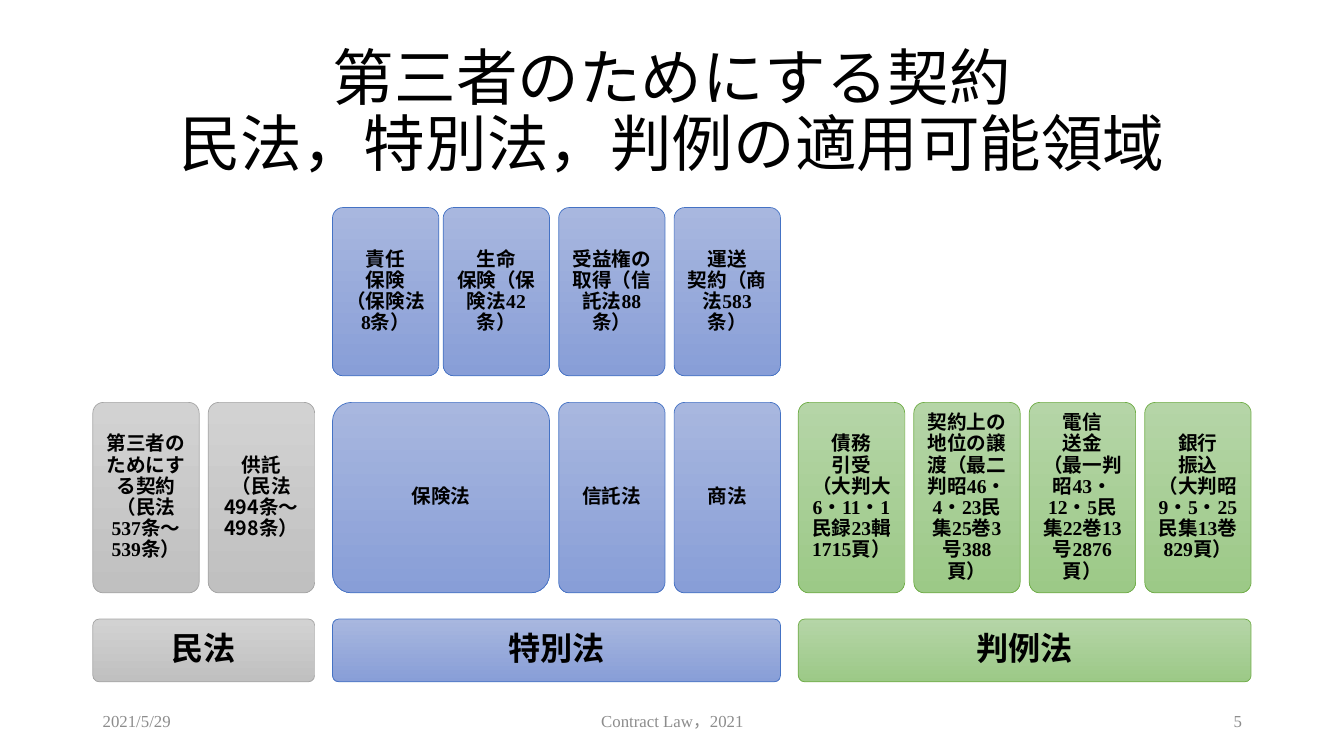
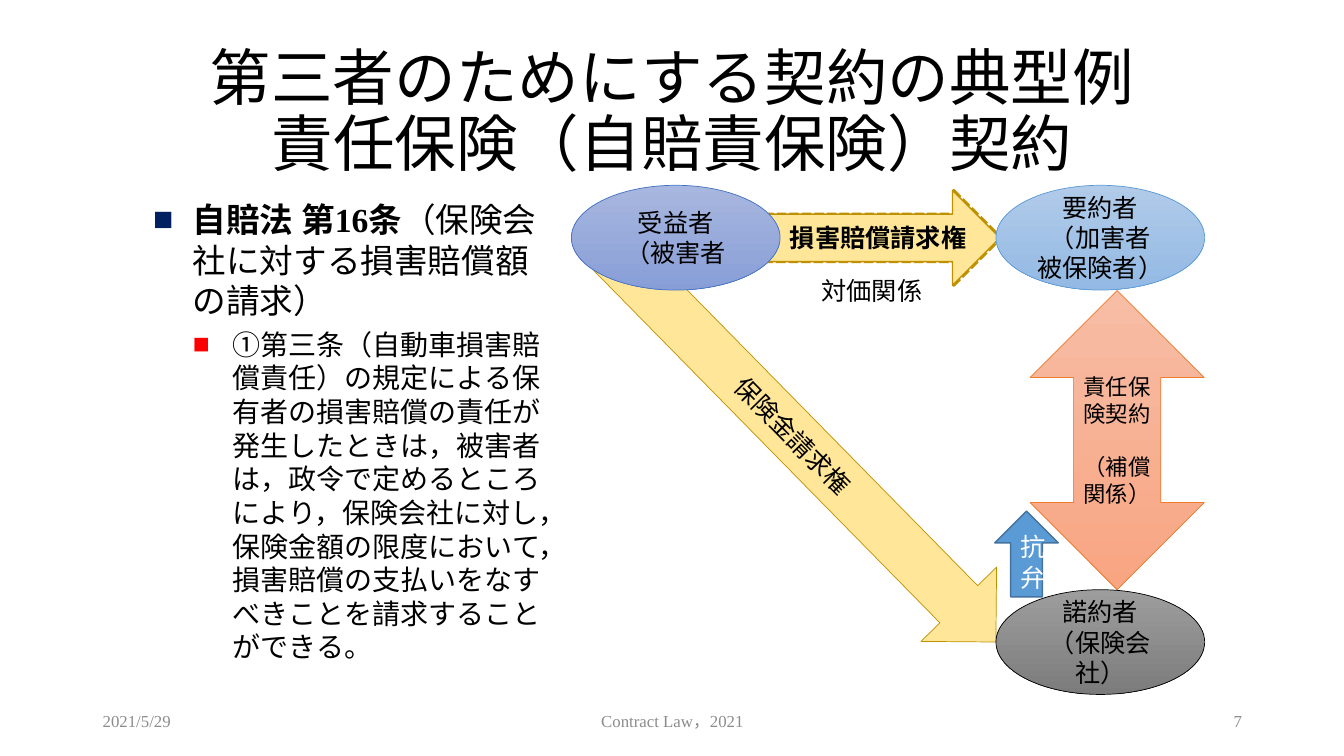
from copy import deepcopy

from lxml import etree
from pptx import Presentation
from pptx import util as u
from pptx.dml.color import RGBColor
from pptx.enum import dml, shapes, text
from pptx.oxml import ns

SERIF, GOTHIC = "Times New Roman", "Noto Sans CJK JP"
BLACK = RGBColor(0x00, 0x00, 0x00)
WHITE = RGBColor(0xFF, 0xFF, 0xFF)
FOOTER_GRAY = RGBColor(0x8C, 0x8C, 0x8C)
YELLOW = RGBColor(0xFF, 0xE6, 0x99)
GOLD = RGBColor(0xBF, 0x90, 0x00)
SKY = RGBColor(0x5B, 0x9B, 0xD5)
STEEL = RGBColor(0x43, 0x73, 0x9E)
NAVY = RGBColor(0x00, 0x20, 0x60)
RED = RGBColor(0xFF, 0x00, 0x00)

GRAY_STYLE = (RGBColor(0xD2, 0xD2, 0xD2), RGBColor(0xC0, 0xC0, 0xC0)), RGBColor(0xA5, 0xA5, 0xA5)
BLUE_STYLE = (RGBColor(0xA8, 0xB7, 0xDF), RGBColor(0x88, 0x9E, 0xD7)), RGBColor(0x44, 0x72, 0xC4)
GREEN_STYLE = (RGBColor(0xB5, 0xD5, 0xA7), RGBColor(0x9C, 0xC9, 0x87)), RGBColor(0x70, 0xAD, 0x47)
SKY_STYLE = (RGBColor(0xB1, 0xCB, 0xE9), RGBColor(0x93, 0xB9, 0xE4)), SKY
ORANGE_STYLE = (RGBColor(0xF7, 0xBD, 0xA5), RGBColor(0xF8, 0xA5, 0x82)), RGBColor(0xED, 0x7D, 0x31)
DARK_STYLE = (RGBColor(0x9D, 0x9D, 0x9D), RGBColor(0x7C, 0x7C, 0x7C)), BLACK

DATE, COURSE = "2021/5/29", "Contract Law，2021"
LEFT, CENTER, RIGHT = text.PP_ALIGN.LEFT, text.PP_ALIGN.CENTER, text.PP_ALIGN.RIGHT
SHAPE = shapes.MSO_SHAPE

AREAS_TITLE = "第三者のためにする契約\n民法，特別法，判例の適用可能領域"
AREAS = [
    ("民法", GRAY_STYLE, [
        ("第三者のためにする契約\n（民法537条～539条）", []),
        ("供託\n（民法494条～498条）", []),
    ]),
    ("特別法", BLUE_STYLE, [
        ("保険法", ["責任\n保険\n（保険法8条）", "生命\n保険（保険法42条）"]),
        ("信託法", ["受益権の取得（信託法88条）"]),
        ("商法", ["運送\n契約（商法583条）"]),
    ]),
    ("判例法", GREEN_STYLE, [
        ("債務\n引受\n（大判大6・11・1民録23輯1715頁）", []),
        ("契約上の地位の譲渡（最二判昭46・4・23民集25巻3号388頁）", []),
        ("電信\n送金\n（最一判昭43・12・5民集22巻13号2876頁）", []),
        ("銀行\n振込\n（大判昭9・5・25民集13巻829頁）", []),
    ]),
]
GOTHIC_CARD = "供託"
AREAS_LEFT, CARD_WIDTH = 2.34, 2.68
CASE_GAP, CARD_GAP, AREA_GAP = 0.11, 0.23, 0.45
CASE_ROW, CARD_ROW, AREA_ROW = (5.23, 4.24), (10.14, 4.8), (15.6, 1.58)

EXAMPLE_TITLE = "第三者のためにする契約の典型例\n責任保険（自賠責保険）契約"
STATUTE = [
    ([("自賠法 第16条", True), ("（保険会社に対する損害賠償額の請求）", False)], 24, 1, 10, NAVY),
    ([("①第三条（自動車損害賠償責任）の規定による保有者の損害賠償の責任が発生したときは，"
       "被害者は，政令で定めるところにより，保険会社に対し，保険金額の限度において，"
       "損害賠償の支払いをなすべきことを請求することができる。", False)], 20, 2, 5, RED),
]
PARTY_SIZE = (5.26, 2.64)
PARTIES = [
    (["受益者", "（被害者"], (14.4, 4.67), BLUE_STYLE),
    (["要約者", "（加害者\n被保険者）"], (25.1, 4.67), SKY_STYLE),
    (["諾約者", "（保険会社）"], (25.1, 14.86), DARK_STYLE),
]


def add_span(para, words, size, font, color, bold):
    first = len(para.runs)
    for index, line in enumerate(words.split("\n")):
        if index:
            para.add_line_break()
        para.add_run().text = line
    for span in para.runs[first:]:
        span.font.size, span.font.name, span.font.bold = u.Pt(size), font, bold
        span.font.color.rgb = color
        etree.SubElement(span._r.get_or_add_rPr(), ns.qn("a:ea"), typeface=GOTHIC)
    for line_break in para._p.findall(ns.qn("a:br")):
        if len(line_break) == 0:
            line_break.append(deepcopy(para.runs[first]._r.rPr))


def write(box, paragraphs, size=18, font=SERIF, color=BLACK, bold=False, align=CENTER,
          spacing=None, inset=None, anchor=text.MSO_ANCHOR.MIDDLE, before=()):
    frame = box.text_frame
    frame.word_wrap, frame.vertical_anchor = True, anchor
    if inset is not None:
        frame.margin_left = frame.margin_right = u.Cm(inset)
        frame.margin_top = frame.margin_bottom = u.Cm(inset)
    for index, words in enumerate(paragraphs):
        para = frame.paragraphs[0] if index == 0 else frame.add_paragraph()
        para.alignment = align
        if spacing:
            para.line_spacing = spacing
        if index < len(before):
            para.space_before = u.Pt(before[index])
        add_span(para, words, size, font, color, bold)


def add_label(page, area, words, **style):
    box = page.shapes.add_textbox(*map(u.Cm, area))
    write(box, [words], **style)


def add_figure(page, kind, area, fill, line, width=0.5):
    box = page.shapes.add_shape(kind, *map(u.Cm, area))
    box.shadow.inherit = False
    if fill is None:
        box.fill.background()
    elif isinstance(fill, RGBColor):
        box.fill.solid()
        box.fill.fore_color.rgb = fill
    else:
        box.fill.gradient()
        box.fill.gradient_angle = 270
        for stop, color in zip(box.fill.gradient_stops, fill):
            stop.color.rgb = color
    box.line.color.rgb, box.line.width = line, u.Pt(width)
    return box


def add_page(deck, title, number):
    page = deck.slides.add_slide(deck.slide_layouts[6])
    add_label(page, (2.34, 1.02, 29.21, 3.68), title, size=44, font=GOTHIC, spacing=0.9)
    for left, width, words, align in [(2.34, 7.62, DATE, LEFT), (11.23, 11.43, COURSE, CENTER),
                                      (23.93, 7.62, str(number), RIGHT)]:
        add_label(page, (left, 17.65, width, 1.02), words, size=12, color=FOOTER_GRAY, align=align)
    return page


def add_card(page, left, width, row, words, style, size=14, inset=0.15):
    top, height = row
    box = add_figure(page, SHAPE.ROUNDED_RECTANGLE, (left, top, width, height), *style)
    box.adjustments[0] = 0.1
    font = GOTHIC if words.startswith(GOTHIC_CARD) else SERIF
    write(box, [words], size=size, font=font, bold=True, spacing=0.9, inset=inset)


def build_areas(deck):
    page = add_page(deck, AREAS_TITLE, 5)
    area_left = AREAS_LEFT
    for area, style, cards in AREAS:
        left = area_left
        for card, cases in cards:
            count = max(1, len(cases))
            width = count * CARD_WIDTH + (count - 1) * CASE_GAP
            add_card(page, left, width, CARD_ROW, card, style)
            for index, case in enumerate(cases):
                case_left = left + index * (CARD_WIDTH + CASE_GAP)
                add_card(page, case_left, CARD_WIDTH, CASE_ROW, case, style)
            left += width + CARD_GAP
        area_width = left - CARD_GAP - area_left
        add_card(page, area_left, area_width, AREA_ROW, area, style, size=23, inset=0.25)
        area_left += area_width + AREA_GAP


def add_statute(page):
    frame = page.shapes.add_textbox(*map(u.Cm, (3.61, 4.9, 10.8, 11.86))).text_frame
    frame.word_wrap = True
    for index, (spans, size, level, before, bullet_color) in enumerate(STATUTE):
        para = frame.paragraphs[0] if index == 0 else frame.add_paragraph()
        para.space_before = u.Pt(before)
        props = para._p.get_or_add_pPr()
        props.set("marL", str(u.Cm(level)))
        props.set("indent", str(-u.Cm(1)))
        tint = etree.SubElement(props, ns.qn("a:buClr"))
        etree.SubElement(tint, ns.qn("a:srgbClr"), val=str(bullet_color))
        etree.SubElement(props, ns.qn("a:buFont"), typeface=SERIF)
        etree.SubElement(props, ns.qn("a:buChar"), char="■")
        for words, bold in spans:
            add_span(para, words, size, SERIF, BLACK, bold)


def build_example(deck):
    page = add_page(deck, EXAMPLE_TITLE, 7)
    dashed = add_figure(page, SHAPE.RIGHT_ARROW, (19.26, 4.8, 5.97, 2.39), None, GOLD, 2.25)
    dashed.line.dash_style = dml.MSO_LINE.SQUARE_DOT
    damages = add_figure(page, SHAPE.RIGHT_ARROW, (19.23, 4.8, 5.97, 2.39), YELLOW, GOLD, 1)
    write(damages, ["損害賠償請求権"], bold=True, align=RIGHT)
    add_statute(page)
    contract = add_figure(page, SHAPE.UP_DOWN_ARROW, (25.96, 7.32, 4.39, 7.54), *ORANGE_STYLE)
    write(contract, ["責任保険契約", "（補償", "関係）"], size=16, before=(0, 19))
    claim = add_figure(page, SHAPE.RIGHT_ARROW, (13.26, 9.88, 13.92, 2.67), YELLOW, GOLD)
    claim.rotation = 45.5
    write(claim, ["保険金請求権"])
    for lines, place, style in PARTIES:
        write(add_figure(page, SHAPE.OVAL, place + PARTY_SIZE, *style), lines)
    add_label(page, (20.4, 6.81, 3.15, 1.02), "対価関係")
    defence = add_figure(page, SHAPE.UP_ARROW, (25.07, 12.88, 1.6, 2.16), SKY, STEEL, 1)
    write(defence, ["抗弁"], color=WHITE)


def main():
    deck = Presentation()
    deck.slide_width, deck.slide_height = u.Cm(33.87), u.Cm(19.05)
    build_areas(deck)
    build_example(deck)
    deck.save("out.pptx")


if __name__ == "__main__":
    main()
